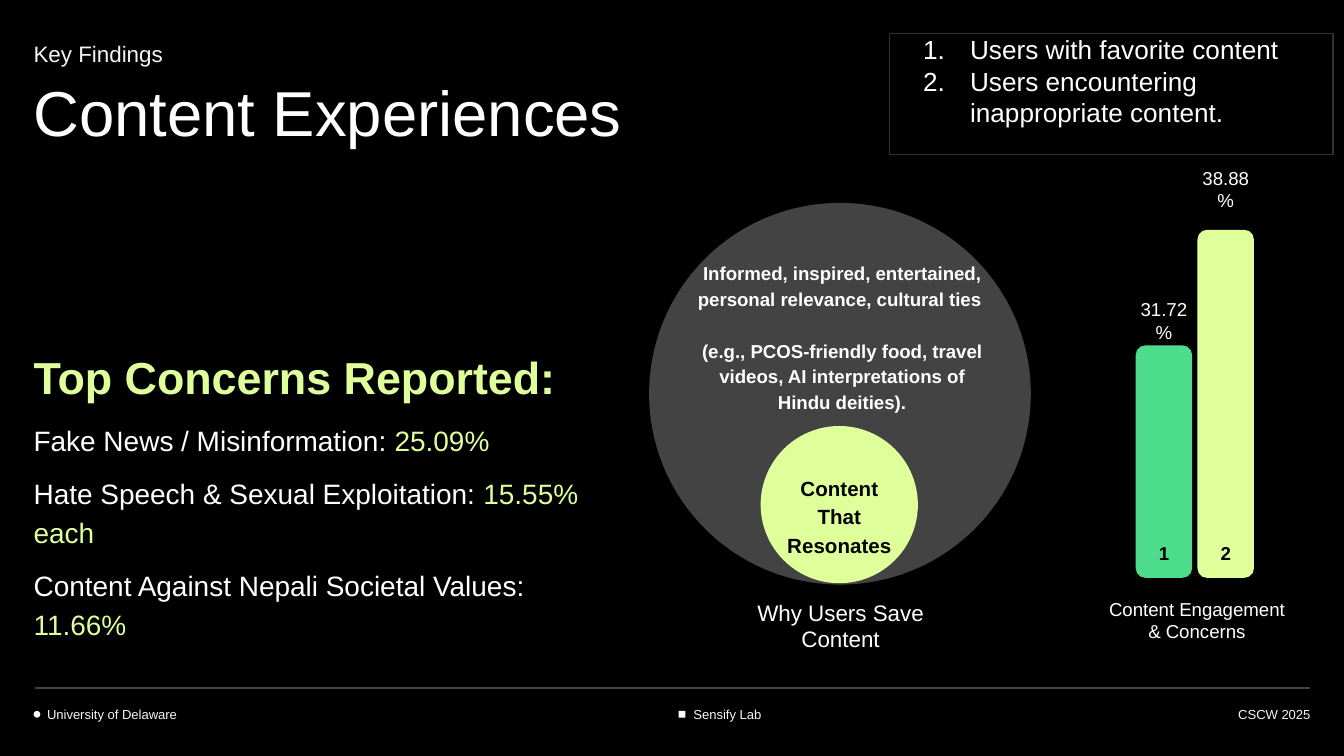
"""Build the Content Experiences key findings slide."""
from lxml.etree import SubElement
from pptx import Presentation
from pptx.dml.color import RGBColor
from pptx.enum.shapes import MSO_CONNECTOR, MSO_SHAPE
from pptx.enum.text import MSO_ANCHOR, PP_ALIGN
from pptx.oxml.ns import qn
from pptx.util import Inches, Pt

BLACK = RGBColor(0x00, 0x00, 0x00)
WHITE = RGBColor(0xFF, 0xFF, 0xFF)
OFF_WHITE = RGBColor(0xF5, 0xF5, 0xF5)
GREY = RGBColor(0x43, 0x43, 0x43)
BORDER = RGBColor(0x32, 0x32, 0x32)
LIME = RGBColor(0xDE, 0xFF, 0x9A)
GREEN = RGBColor(0x4C, 0xDC, 0x8B)
LEFT, CENTER, RIGHT = PP_ALIGN.LEFT, PP_ALIGN.CENTER, PP_ALIGN.RIGHT
TOP, MIDDLE, BOTTOM = MSO_ANCHOR.TOP, MSO_ANCHOR.MIDDLE, MSO_ANCHOR.BOTTOM

prs = Presentation()
prs.slide_width = Inches(10)
prs.slide_height = prs.slide_width * 9 // 16
s = prs.slides.add_slide(prs.slide_layouts[6])
s.background.fill.solid()
s.background.fill.fore_color.rgb = BLACK


def add_shape(kind, x, y, w, h, color):
    sp = s.shapes.add_shape(kind, Inches(x), Inches(y), Inches(w), Inches(h))
    sp.shadow.inherit = False
    sp.fill.solid()
    sp.fill.fore_color.rgb = color
    sp.line.fill.background()
    return sp


def add_text(sp, paragraphs, size, align=LEFT, anchor=MIDDLE, insets=(0, 0, 0, 0),
             spacing=1.0, before=0):
    tf = sp.text_frame
    tf.word_wrap = True
    tf.vertical_anchor = anchor
    tf.margin_left, tf.margin_top, tf.margin_right, tf.margin_bottom = map(Inches, insets)
    for i, runs in enumerate(paragraphs):
        p = tf.paragraphs[0] if i == 0 else tf.add_paragraph()
        p.alignment = align
        p.line_spacing = spacing
        if i and before:
            p.space_before = Pt(before)
        for text, color, bold in runs:
            r = p.add_run()
            r.text = text
            r.font.name = "Arial"
            r.font.size = Pt(size)
            r.font.bold = bold
            r.font.color.rgb = color
    return tf


add_shape(MSO_SHAPE.OVAL, 0.25, 5.29, 0.05, 0.05, WHITE)
add_shape(MSO_SHAPE.RECTANGLE, 5.05, 5.29, 0.05, 0.05, WHITE)
rule = s.shapes.add_connector(MSO_CONNECTOR.STRAIGHT, Inches(0.26), Inches(5.12),
                              Inches(9.75), Inches(5.12))
rule.line.color.rgb = GREY
rule.line.width = Pt(0.75)
SubElement(rule._element.spPr, qn("a:effectLst"))

add_shape(MSO_SHAPE.OVAL, 4.83, 1.51, 2.84, 2.84, GREY)
add_shape(MSO_SHAPE.OVAL, 5.66, 3.17, 1.17, 1.17, LIME)

for x, y, h, color, number, value, value_top in [
    (8.91, 1.71, 2.59, LIME, "2", "38.88%", 1.22),
    (8.45, 2.57, 1.73, GREEN, "1", "31.72%", 2.2),
]:
    bar = add_shape(MSO_SHAPE.ROUNDED_RECTANGLE, x, y, 0.42, h, color)
    bar.adjustments[0] = 0.17
    for top, label, ink, bold in [(3.93, number, BLACK, True), (value_top, value, WHITE, False)]:
        sp = s.shapes.add_textbox(Inches(x), Inches(top), Inches(0.42), Inches(0.37))
        add_text(sp, [[(label, ink, bold)]], 10, CENTER)

pad = (0.1, 0.1, 0.1, 0.1)
none = (0, 0, 0, 0)
for x, y, w, h, text, size, color, bold, align, anchor, insets, spacing in [
    (0.25, 0.25, 3.1, 0.36, "Key Findings", 12, OFF_WHITE, False, LEFT, BOTTOM,
     (0, 0, 0, 0.11), 1.15),
    (0.25, 0.61, 7.09, 0.62, "Content Experiences", 34, WHITE, False, LEFT, TOP,
     (0, 0, 0.1, 0.1), 0.9),
    (5.72, 3.62, 1.05, 0.42, "Content That Resonates", 11, BLACK, True, CENTER, MIDDLE, pad, 1.15),
    (5.58, 4.47, 1.35, 0.37, "Why Users Save Content", 12, WHITE, False, CENTER, MIDDLE, none, 1.0),
    (8.23, 4.43, 1.35, 0.37, "Content Engagement & Concerns", 10, WHITE, False, CENTER, MIDDLE,
     none, 1.0),
    (0.35, 5.11, 2.95, 0.26, "University of Delaware", 7, OFF_WHITE, False, LEFT, BOTTOM, none, 1.15),
    (5.16, 5.11, 2.51, 0.26, "Sensify Lab", 7, OFF_WHITE, False, LEFT, BOTTOM, none, 1.15),
    (7.5, 5.12, 2.25, 0.25, "CSCW 2025", 7, OFF_WHITE, False, RIGHT, BOTTOM, none, 1.15),
]:
    sp = s.shapes.add_textbox(Inches(x), Inches(y), Inches(w), Inches(h))
    add_text(sp, [[(text, color, bold)]], size, align, anchor, insets, spacing)

sp = s.shapes.add_textbox(Inches(5.08), Inches(2.22), Inches(2.37), Inches(0.56))
add_text(sp, [
    [("Informed, inspired, entertained, personal relevance, cultural ties ", WHITE, True)],
    [("(e.g., PCOS-friendly food, travel videos, AI interpretations of Hindu deities).", WHITE, True)],
], 10, CENTER, MIDDLE, pad, 1.15, 14)

sp = s.shapes.add_textbox(Inches(0.25), Inches(1.54), Inches(4.46), Inches(3.33))
tf = add_text(sp, [
    [("Top Concerns Reported:", LIME, True)],
    [("Fake News / Misinformation: ", WHITE, False), ("25.09%", LIME, False)],
    [("Hate Speech & Sexual Exploitation: ", WHITE, False), ("15.55% each", LIME, False)],
    [("Content Against Nepali Societal Values:", WHITE, False), (" 11.66%", LIME, False)],
], 15, LEFT, BOTTOM, (0, 0.1, 0.1, 0.1), 1.15, 8)
tf.paragraphs[0].runs[0].font.size = Pt(24)
tf.paragraphs[-1].space_after = Pt(8)

legend = add_shape(MSO_SHAPE.RECTANGLE, 6.62, 0.25, 3.3, 0.9, BLACK)
legend.line.color.rgb = BORDER
legend.line.width = Pt(0.75)
tf = add_text(legend, [
    [("Users with favorite content", WHITE, False)],
    [("Users encountering inappropriate content.", WHITE, False)],
], 14, LEFT, TOP, (0.1, 0, 0.1, 0.1))
for p in tf.paragraphs:
    pPr = p._p.get_or_add_pPr()
    pPr.set("marL", str(Inches(0.5)))
    pPr.set("indent", str(Inches(-0.35)))
    SubElement(SubElement(pPr, qn("a:buClr")), qn("a:srgbClr")).set("val", str(WHITE))
    SubElement(pPr, qn("a:buFont")).set("typeface", "Arial")
    SubElement(pPr, qn("a:buAutoNum")).set("type", "arabicPeriod")

prs.save("out.pptx")
